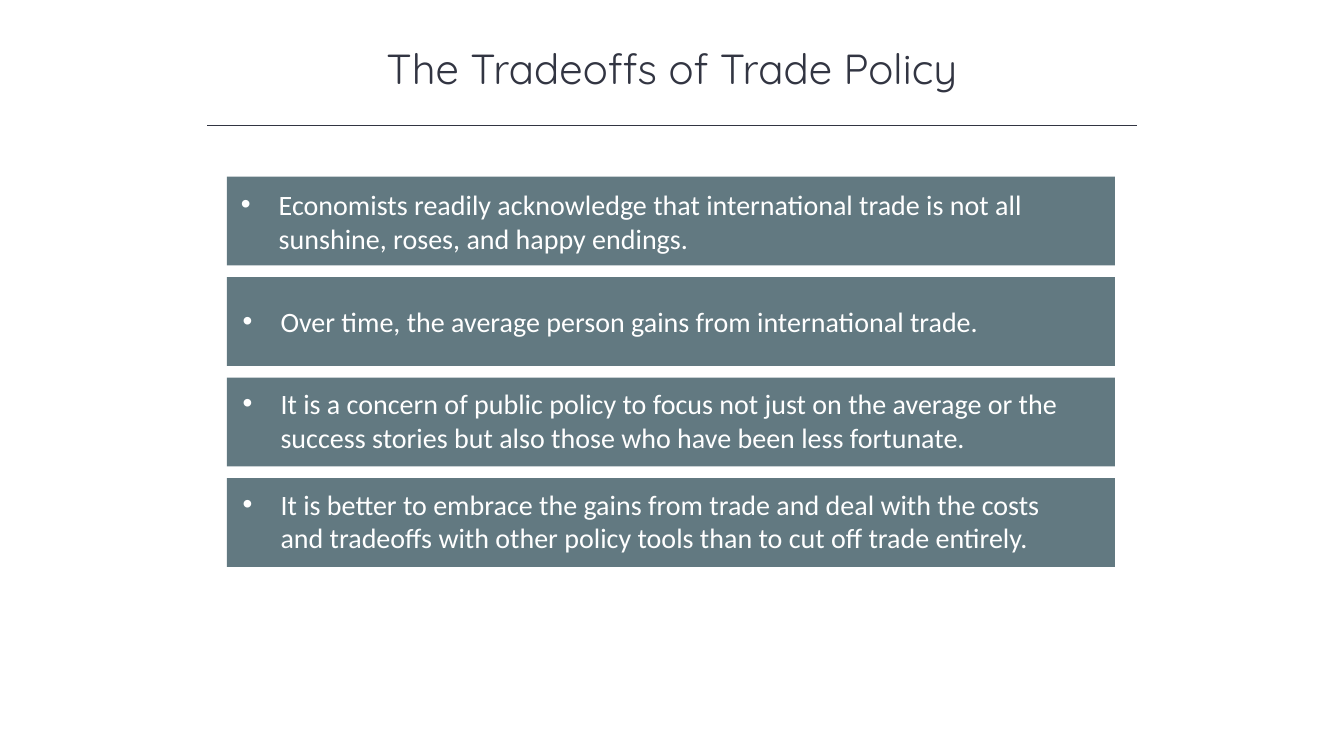
from dataclasses import dataclass

from lxml import etree
from pptx import Presentation
from pptx.dml.color import RGBColor
from pptx.enum.shapes import MSO_CONNECTOR, MSO_SHAPE
from pptx.enum.text import MSO_ANCHOR, MSO_AUTO_SIZE, PP_ALIGN
from pptx.oxml.ns import qn
from pptx.util import Pt

RECTANGLE = MSO_SHAPE.RECTANGLE
STRAIGHT = MSO_CONNECTOR.STRAIGHT
MIDDLE = MSO_ANCHOR.MIDDLE
NO_AUTOFIT = MSO_AUTO_SIZE.NONE
LEFT, CENTER = PP_ALIGN.LEFT, PP_ALIGN.CENTER


@dataclass(frozen=True)
class Theme:
    ink: str = "323542"
    panel: str = "627981"
    light: str = "FFFFFF"
    title_font: str = "Quicksand"
    body_font: str = "Calibri"
    title_size: float = 30
    body_size: float = 20
    bullet_indent: float = 27


def write_text(shape, text, *, font, size, color, align=LEFT, bullet_indent=0):
    frame = shape.text_frame
    frame.word_wrap = True
    frame.auto_size = NO_AUTOFIT
    frame.vertical_anchor = MIDDLE
    frame.margin_left = frame.margin_right = Pt(7.2)
    frame.margin_top = frame.margin_bottom = Pt(3.6)
    paragraph = frame.paragraphs[0]
    paragraph.text = text
    paragraph.alignment = align
    if bullet_indent:
        properties = paragraph._p.get_or_add_pPr()
        properties.set("marL", str(Pt(bullet_indent)))
        properties.set("indent", str(-Pt(bullet_indent)))
        etree.SubElement(properties, qn("a:buFont")).set("typeface", "Arial")
        etree.SubElement(properties, qn("a:buChar")).set("char", "•")
    run_font = paragraph.runs[0].font
    run_font.name = font
    run_font.size = Pt(size)
    run_font.color.rgb = RGBColor.from_string(color)


class SlideBuilder:
    def __init__(self, presentation, theme):
        self.theme = theme
        self.slide = presentation.slides.add_slide(presentation.slide_layouts[5])

    def title(self, text, left, top, width, height):
        shape = self.slide.shapes.title
        shape.left, shape.top = Pt(left), Pt(top)
        shape.width, shape.height = Pt(width), Pt(height)
        write_text(shape, text, font=self.theme.title_font,
                   size=self.theme.title_size, color=self.theme.ink, align=CENTER)

    def rule(self, left, right, y):
        line = self.slide.shapes.add_connector(STRAIGHT, Pt(left), Pt(y), Pt(right), Pt(y))
        line.line.color.rgb = RGBColor.from_string(self.theme.ink)
        line.line.width = Pt(1)
        etree.SubElement(line._element.spPr, qn("a:effectLst"))

    def rectangle(self, group, left, top, width, height):
        shape = group.shapes.add_shape(RECTANGLE, Pt(left), Pt(top), Pt(width), Pt(height))
        shape.shadow.inherit = False
        shape.fill.solid()
        shape.fill.fore_color.rgb = RGBColor.from_string(self.theme.panel)
        shape.line.fill.background()
        return shape

    def statement(self, text, panel_box, text_box):
        group = self.slide.shapes.add_group_shape()
        self.rectangle(group, *panel_box)
        label = self.rectangle(group, *text_box)
        write_text(label, text, font=self.theme.body_font, size=self.theme.body_size,
                   color=self.theme.light, bullet_indent=self.theme.bullet_indent)


STATEMENTS = [
    ("Economists readily acknowledge that international trade is not all "
     "sunshine, roses, and happy endings.", 165, 130.3, 55.4),
    ("Over time, the average person gains from international trade.",
     166.3, 213.8, 31.5),
    ("It is a concern of public policy to focus not just on the average or the "
     "success stories but also those who have been less fortunate.", 166.3, 272.4, 55.4),
    ("It is better to embrace the gains from trade and deal with the costs and "
     "tradeoffs with other policy tools than to cut off trade entirely.", 166.3, 344.2, 55.4),
]
PANEL_LEFT, PANEL_TOP, PANEL_WIDTH, PANEL_HEIGHT = 162, 126.2, 634.4, 63.4
PANEL_PITCH = 71.8
TEXT_WIDTH = 615


def main():
    presentation = Presentation()
    presentation.slide_width, presentation.slide_height = Pt(960), Pt(540)
    builder = SlideBuilder(presentation, Theme())
    builder.title("The Tradeoffs of Trade Policy", 120, 26.6, 720, 44)
    builder.rule(148, 812, 89.5)
    for index, (text, left, top, height) in enumerate(STATEMENTS):
        panel_top = PANEL_TOP + index * PANEL_PITCH
        builder.statement(text, (PANEL_LEFT, panel_top, PANEL_WIDTH, PANEL_HEIGHT),
                          (left, top, TEXT_WIDTH, height))
    presentation.save("out.pptx")


if __name__ == "__main__":
    main()
